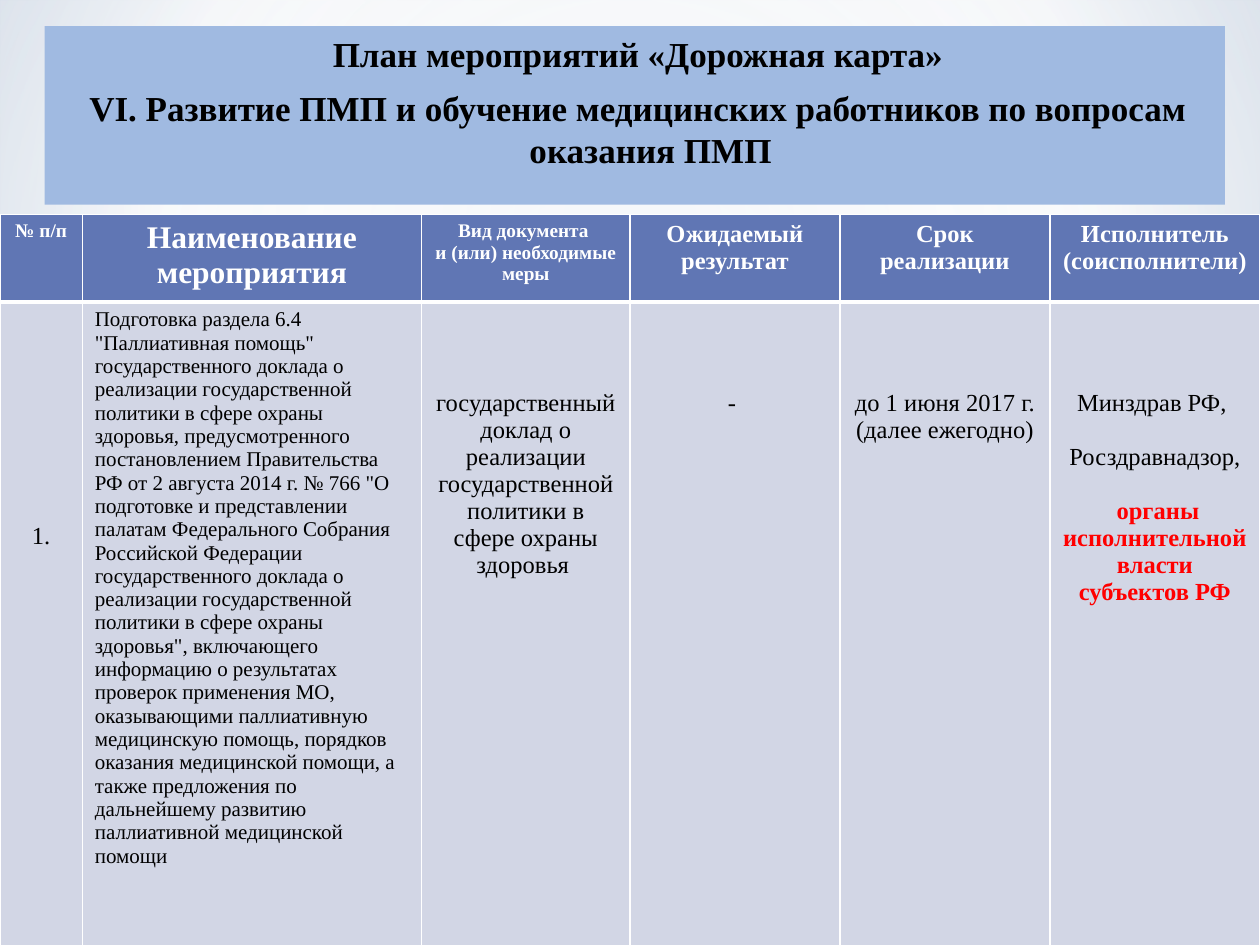
from dataclasses import dataclass

from lxml import etree
from pptx import Presentation
from pptx.dml.color import RGBColor
from pptx.enum import shapes, text
from pptx.oxml import ns
from pptx.util import Pt


@dataclass(frozen=True)
class Theme:
    font: str = "Times New Roman"
    black: str = "000000"
    white: str = "FFFFFF"
    red: str = "FF0000"
    haze: str = "E4E9EF"
    banner: str = "A0BAE1"
    header: str = "6076B4"
    body: str = "D2D6E5"
    title: int = 20
    large: int = 18
    normal: int = 14
    compact: int = 12
    small: int = 11


T = Theme()
CENTER, LEFT = text.PP_ALIGN.CENTER, text.PP_ALIGN.LEFT
RECT, OVAL = shapes.MSO_SHAPE.RECTANGLE, shapes.MSO_SHAPE.OVAL
WIDTH, HEIGHT = 720, 540
LINE = 15.5  # height of one line of normal text

TITLE = [
    "План мероприятий «Дорожная карта»",
    "VI. Развитие ПМП и обучение медицинских работников по вопросам оказания ПМП",
]
COLUMNS = [47, 194, 119, 120, 120, 120]
ROWS = [50, 368]
HEADERS = [
    (["№ п/п"], T.small),
    (["Наименование мероприятия"], T.large),
    (["Вид документа ", "и (или) необходимые меры"], T.small),
    (["Ожидаемый результат"], T.normal),
    (["Срок реализации"], T.normal),
    (["Исполнитель (соисполнители)"], T.normal),
]
MEASURE = (
    'Подготовка раздела 6.4 "Паллиативная помощь" государственного доклада о '
    "реализации государственной политики в сфере охраны здоровья, предусмотренного "
    'постановлением Правительства РФ от 2 августа 2014 г. № 766 "О подготовке и '
    "представлении палатам Федерального Собрания Российской Федерации "
    "государственного доклада о реализации государственной политики в сфере охраны "
    'здоровья", включающего информацию о результатах проверок применения МО, '
    "оказывающими паллиативную медицинскую помощь, порядков оказания медицинской "
    "помощи, а также предложения по дальнейшему развитию паллиативной медицинской помощи"
)
# paragraphs, size, alignment, top margin
ACTIVITY = [
    (["1."], T.normal, CENTER, 126),
    ([MEASURE], T.compact, LEFT, 3.6),
    (["государственный доклад о реализации государственной политики в сфере "
      "охраны здоровья "], T.normal, CENTER, 50),
    (["- "], T.normal, CENTER, 50),
    (["до 1 июня 2017 г. (далее ежегодно)"], T.normal, CENTER, 50),
    (["Минздрав РФ, ", "Росздравнадзор,", " органы исполнительной власти субъектов РФ"],
     T.normal, CENTER, 50),
]

BACKGROUND = [(0, "D7DFE8", 100), (60, T.white, 100), (100, "A3B9D4", 100)]
# shape, box, stops (position, colour, opacity), centre is None for a linear gradient
MIDDLE = (50, 50, 50, 50)
GLOWS = [
    (RECT, (0, 402, WIDTH, 138),
     [(0, T.white, 91), (37, T.white, 76), (100, T.haze, 79)], MIDDLE),
    (RECT, (0, 0, WIDTH, 402),
     [(0, T.white, 89), (48, T.white, 62), (100, T.haze, 79)], MIDDLE),
    (RECT, (0, 297, WIDTH, 180),
     [(0, T.white, 0), (29, T.white, 30), (45, T.haze, 40), (55, T.white, 26),
      (65, T.haze, 60), (100, T.white, 0)], None),
    (OVAL, (0, 126, WIDTH, 402), [(0, T.white, 100), (56, T.white, 0)], MIDDLE),
]


def child(parent, tag, **attributes):
    element = etree.SubElement(parent, ns.qn(tag))
    for key, value in attributes.items():
        element.set(key, str(value))
    return element


def assign(target, formats):
    for name, value in formats.items():
        setattr(target, name, value)


def set_gradient(fill, stops, centre):
    """Replace the content of a gradient fill that python-pptx has started."""
    fill.gradient()
    gradient = fill._xPr.find(ns.qn("a:gradFill"))
    for part in list(gradient):
        gradient.remove(part)
    stop_list = child(gradient, "a:gsLst")
    for position, colour, opacity in stops:
        stop = child(stop_list, "a:gs", pos=position * 1000)
        tint = child(stop, "a:srgbClr", val=colour)
        if opacity < 100:
            child(tint, "a:alpha", val=opacity * 1000)
    if centre is None:
        child(gradient, "a:lin", ang=90 * 60000, scaled=0)
    else:
        route = child(gradient, "a:path", **{"path": "circle"})
        child(route, "a:fillToRect",
              **{side: value * 1000 for side, value in zip("ltrb", centre)})


def add_plain_shape(slide, kind, box):
    shape = slide.shapes.add_shape(kind, *map(Pt, box))
    shape.shadow.inherit = False
    shape.line.fill.background()
    return shape


def write(frame, paragraphs, size, colour, bold=False, **formats):
    """Fill a text frame and return its paragraphs."""
    for index, wording in enumerate(paragraphs):
        paragraph = frame.paragraphs[0] if index == 0 else frame.add_paragraph()
        assign(paragraph, formats)
        run = paragraph.add_run()
        run.text = wording
        assign(run.font, {"name": T.font, "size": Pt(size), "bold": bold})
        run.font.color.rgb = RGBColor.from_string(colour)
    return frame.paragraphs


def add_backdrop(slide):
    set_gradient(slide.background.fill, BACKGROUND, (20, 10, 20, 60))
    for kind, box, stops, centre in GLOWS:
        set_gradient(add_plain_shape(slide, kind, box).fill, stops, centre)


def add_title(slide, box):
    banner = add_plain_shape(slide, RECT, box)
    banner.fill.solid()
    banner.fill.fore_color.rgb = RGBColor.from_string(T.banner)
    frame = banner.text_frame
    assign(frame, {"word_wrap": True, "vertical_anchor": text.MSO_ANCHOR.TOP})
    for paragraph in write(frame, TITLE, T.title, T.black, bold=True, alignment=CENTER,
                           space_before=Pt(4), space_after=Pt(3)):
        properties = paragraph._p.get_or_add_pPr()
        properties.set("marL", str(Pt(18)))
        properties.set("indent", str(Pt(-14.4)))


def style_cell(cell, colour, bottom_line):
    properties = cell._tc.get_or_add_tcPr()
    for side, weight in (("L", 1), ("R", 1), ("T", 1), ("B", bottom_line)):
        border = child(properties, f"a:ln{side}", w=Pt(weight))
        child(child(border, "a:solidFill"), "a:srgbClr", val=T.white)
    cell.fill.solid()
    cell.fill.fore_color.rgb = RGBColor.from_string(colour)


def add_plan(slide, box):
    plan = slide.shapes.add_table(len(ROWS), len(COLUMNS), *map(Pt, box)).table
    for column, width in zip(plan.columns, COLUMNS):
        column.width = Pt(width)
    for row, height in zip(plan.rows, ROWS):
        row.height = Pt(height)
    for index, (wording, size) in enumerate(HEADERS):
        cell = plan.cell(0, index)
        style_cell(cell, T.header, 3)
        write(cell.text_frame, wording, size, T.white, bold=True, alignment=CENTER)
    for index, (wording, size, alignment, top) in enumerate(ACTIVITY):
        cell = plan.cell(1, index)
        style_cell(cell, T.body, 1)
        cell.margin_top = Pt(top)
        executors = write(cell.text_frame, wording, size, T.black, alignment=alignment)
        for paragraph in executors[1:]:
            paragraph.space_before = Pt(LINE)
    regional = executors[-1].runs[0].font
    regional.bold = True
    regional.color.rgb = RGBColor.from_string(T.red)


def main():
    deck = Presentation()
    assign(deck, {"slide_width": Pt(WIDTH), "slide_height": Pt(HEIGHT)})
    slide = deck.slides.add_slide(deck.slide_layouts[6])
    add_backdrop(slide)
    add_title(slide, (25.5, 15, 674.5, 102))
    add_plan(slide, (0, 122.5, sum(COLUMNS), sum(ROWS)))
    deck.save("out.pptx")


if __name__ == "__main__":
    main()
